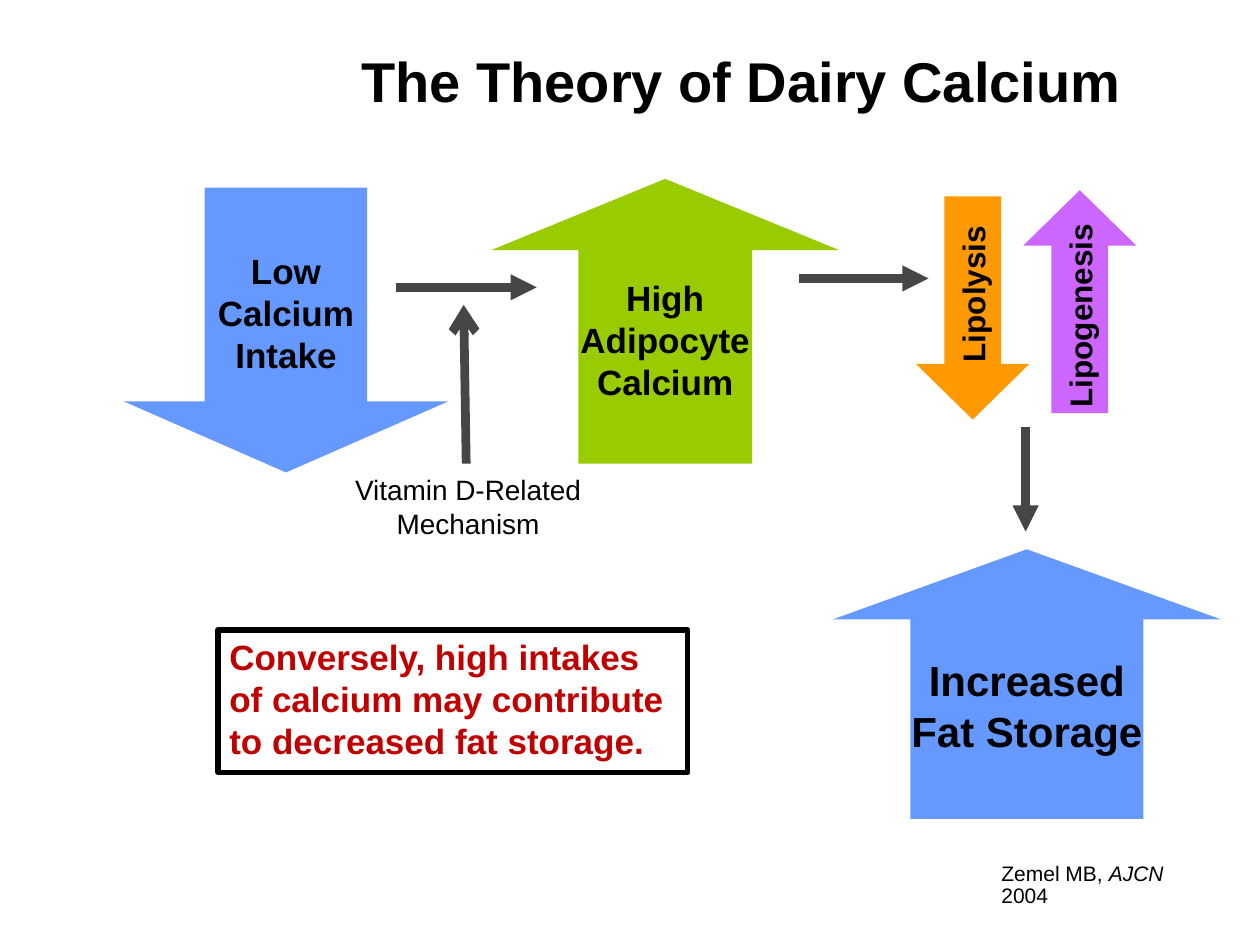
from lxml import etree
from pptx import Presentation
from pptx.dml.color import RGBColor
from pptx.enum.shapes import MSO_CONNECTOR, MSO_SHAPE
from pptx.enum.text import MSO_ANCHOR, PP_ALIGN
from pptx.oxml.ns import qn
from pptx.util import Inches, Pt

UP, DOWN = MSO_SHAPE.UP_ARROW, MSO_SHAPE.DOWN_ARROW
RECTANGLE = MSO_SHAPE.RECTANGLE
STRAIGHT = MSO_CONNECTOR.STRAIGHT
TOP, MIDDLE = MSO_ANCHOR.TOP, MSO_ANCHOR.MIDDLE
LEFT, CENTER, RIGHT = PP_ALIGN.LEFT, PP_ALIGN.CENTER, PP_ALIGN.RIGHT

BLACK = RGBColor(0x00, 0x00, 0x00)
RED = RGBColor(0xC0, 0x00, 0x00)
BLUE = RGBColor(0x66, 0x99, 0xFF)
GREEN = RGBColor(0x99, 0xCC, 0x00)
PURPLE = RGBColor(0xCC, 0x66, 0xFF)
ORANGE = RGBColor(0xFF, 0x99, 0x00)
GRAY = RGBColor(0x46, 0x46, 0x46)


class TheorySlide:
    font_name = "Arial"
    line_width = Pt(5)

    def __init__(self, slide):
        self.slide = slide

    def set_text(self, shape, text, size, color=BLACK, bold=False, align=LEFT,
                 anchor=TOP, wrap=True, insets=(0.1, 0.05)):
        text_frame = shape.text_frame
        text_frame.word_wrap = wrap
        text_frame.vertical_anchor = anchor
        text_frame.margin_left = text_frame.margin_right = Inches(insets[0])
        text_frame.margin_top = text_frame.margin_bottom = Inches(insets[1])
        text_frame.text = text
        paragraph = text_frame.paragraphs[0]
        paragraph.alignment = align
        font = paragraph.font
        font.name, font.size, font.bold = self.font_name, Pt(size), bold
        font.color.rgb = color
        return paragraph

    def text_box(self, box, text, size, **style):
        shape = self.slide.shapes.add_textbox(*map(Inches, box))
        return self.set_text(shape, text, size, **style)

    def framed_note(self, box, text, size, color):
        shape = self.slide.shapes.add_shape(RECTANGLE, *map(Inches, box))
        shape.shadow.inherit = False
        shape.fill.background()
        shape.line.color.rgb = BLACK
        shape.line.width = Pt(3)
        self.set_text(shape, text, size, color, bold=True, insets=(0.09, 0.04))

    def block_arrow(self, kind, box, color, text, size, shaft=0.5, head=0.25,
                    vertical=False):
        shape = self.slide.shapes.add_shape(kind, *map(Inches, box))
        shape.adjustments[0], shape.adjustments[1] = shaft, head
        shape.shadow.inherit = False
        shape.fill.solid()
        shape.fill.fore_color.rgb = color
        shape.line.fill.background()
        self.set_text(shape, text, size, bold=True, align=CENTER, anchor=MIDDLE,
                      wrap=False)
        if vertical:
            body = shape.text_frame._txBody.find(qn("a:bodyPr"))
            body.set("vert", "vert270")

    def line_arrow(self, start, end, head="triangle"):
        connector = self.slide.shapes.add_connector(
            STRAIGHT, *map(Inches, start + end))
        connector.line.color.rgb = GRAY
        connector.line.width = self.line_width
        line = connector.line._get_or_add_ln()
        etree.SubElement(line, qn("a:tailEnd"), type=head)
        etree.SubElement(connector._element.spPr, qn("a:effectLst"))


def main():
    presentation = Presentation()
    presentation.slide_width, presentation.slide_height = Inches(10), Inches(7.5)
    theory = TheorySlide(presentation.slides.add_slide(presentation.slide_layouts[6]))

    # Title
    theory.text_box((1.25, 0.01, 7.75, 1.25), "The Theory of Dairy Calcium", 32,
                    bold=True, align=RIGHT, anchor=MIDDLE)

    # Causes and effects
    theory.block_arrow(DOWN, (0.98, 1.49, 2.58, 2.26), BLUE,
                       "Low\vCalcium\vIntake", 20)
    theory.block_arrow(UP, (3.9, 1.42, 2.76, 2.26), GREEN,
                       "High\vAdipocyte\vCalcium", 20)
    theory.block_arrow(DOWN, (7.27, 1.56, 0.9, 1.77), ORANGE, "Lipolysis", 18,
                       head=0.49, vertical=True)
    theory.block_arrow(UP, (8.12, 1.51, 0.9, 1.77), PURPLE, "Lipogenesis", 18,
                       head=0.49, vertical=True)
    theory.block_arrow(UP, (6.61, 4.36, 3.08, 2.14), BLUE,
                       "Increased\vFat Storage", 24, shaft=0.6, head=0.26)

    # Links between the steps
    theory.line_arrow((3.14, 2.28), (4.26, 2.28))
    theory.line_arrow((6.34, 2.21), (7.37, 2.21))
    theory.line_arrow((8.14, 3.39), (8.14, 4.22))
    theory.line_arrow((3.7, 3.68), (3.68, 2.42), head="arrow")
    theory.text_box((2.69, 3.71, 2.05, 0.62), "Vitamin D-Related Mechanism", 16,
                    align=CENTER, insets=(0.09, 0.04))

    # Conclusion
    theory.framed_note((1.73, 5, 3.73, 1.13),
                       "Conversely, high intakes of calcium may contribute "
                       "to decreased fat storage.", 20, RED)

    # Citation
    citation = theory.text_box((7.85, 6.8, 1.9, 0.28), "Zemel MB, ", 12, wrap=False)
    citation.line_spacing = 0.9
    for text, italic in (("AJCN", True), (" 2004", False)):
        run = citation.add_run()
        run.text = text
        run.font.italic = italic

    presentation.save("out.pptx")


if __name__ == "__main__":
    main()
